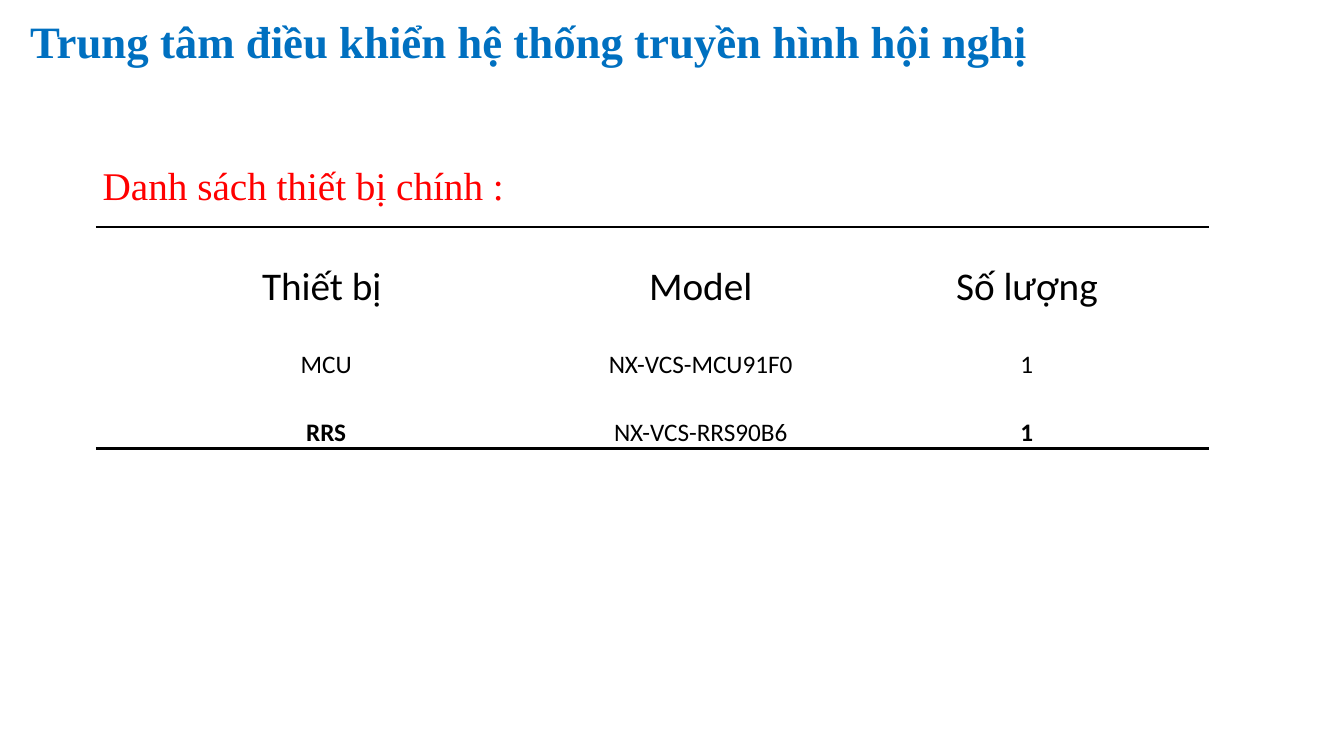
from lxml import etree
from pptx import Presentation
from pptx.dml.color import RGBColor
from pptx.enum.text import MSO_ANCHOR, PP_ALIGN
from pptx.oxml.ns import qn
from pptx.util import Inches, Pt

MIDDLE, TOP, BOTTOM = MSO_ANCHOR.MIDDLE, MSO_ANCHOR.TOP, MSO_ANCHOR.BOTTOM
CENTER = PP_ALIGN.CENTER

TITLE_FORMAT = {"name": "Times New Roman", "size": Pt(32), "bold": True}
CAPTION_FORMAT = {"name": "Times New Roman", "size": Pt(28), "bold": False}
COLUMN_WIDTHS = [4.57, 2.86, 3.61]
ROW_HEIGHTS = [0.84, 0.68, 0.68]
DEVICES = [
    ["Thiết bị ", "Model", "Số lượng"],
    ["MCU", "NX-VCS-MCU91F0", "1"],
    ["RRS", "NX-VCS-RRS90B6", "1"],
]
BOLD_CELLS = {(2, 0), (2, 2)}


def color(value):
    return RGBColor.from_string(value)


def format_font(font, font_format, font_color):
    for name, value in font_format.items():
        setattr(font, name, value)
    font.color.rgb = color(font_color)


def add_text(slide, box, text, font_format, font_color, anchor, line_spacing=1.0):
    shape = slide.shapes.add_textbox(*map(Inches, box))
    frame = shape.text_frame
    frame.word_wrap = True
    frame.vertical_anchor = anchor
    paragraph = frame.paragraphs[0]
    paragraph.text = text
    paragraph.line_spacing = line_spacing
    format_font(paragraph.font, font_format, font_color)


def set_borders(cell, ruled_sides):
    """Draw a 2 pt black rule on the given sides and clear the others."""
    properties = cell._tc.get_or_add_tcPr()
    for position, side in enumerate("LRTB"):
        line = etree.Element(qn(f"a:ln{side}"), w=str(Pt(2)))
        if side in ruled_sides:
            fill = etree.SubElement(line, qn("a:solidFill"))
            etree.SubElement(fill, qn("a:srgbClr"), val="000000")
        else:
            etree.SubElement(line, qn("a:noFill"))
        properties.insert(position, line)


def fill_cell(cell, text, font_format, ruled_sides):
    cell.margin_left = cell.margin_top = cell.margin_right = Inches(0.01)
    cell.margin_bottom = 0
    cell.vertical_anchor = BOTTOM
    cell.fill.solid()
    cell.fill.fore_color.rgb = color("FFFFFF")
    set_borders(cell, ruled_sides)
    paragraph = cell.text_frame.paragraphs[0]
    paragraph.alignment = CENTER
    run = paragraph.add_run()
    run.text = text
    format_font(run.font, font_format, "000000")


def add_device_table(slide, left, top):
    box = (left, top, sum(COLUMN_WIDTHS), sum(ROW_HEIGHTS))
    table = slide.shapes.add_table(
        len(DEVICES), len(COLUMN_WIDTHS), *map(Inches, box)).table
    table.first_row = table.horz_banding = False
    for column, width in zip(table.columns, COLUMN_WIDTHS):
        column.width = Inches(width)
    for row, height in zip(table.rows, ROW_HEIGHTS):
        row.height = Inches(height)

    # Rules only above the header and below the last row
    ruled_sides = {0: "T", len(DEVICES) - 1: "B"}
    for row_index, values in enumerate(DEVICES):
        for column_index, text in enumerate(values):
            font_format = {
                "name": "Calibri",
                "size": Pt(18 if row_index else 28),
                "bold": (row_index, column_index) in BOLD_CELLS,
            }
            fill_cell(table.cell(row_index, column_index), text,
                      font_format, ruled_sides.get(row_index, ""))


def main():
    presentation = Presentation()
    presentation.slide_width = Inches(13.33)
    presentation.slide_height = Inches(7.5)
    slide = presentation.slides.add_slide(presentation.slide_layouts[6])

    # Title
    add_text(slide, (0.2, -0.08, 10.99, 1.04),
             "Trung tâm điều khiển hệ thống truyền hình hội nghị",
             TITLE_FORMAT, "0070C0", MIDDLE, 0.9)
    # Device list
    add_device_table(slide, 0.95, 2.25)
    add_text(slide, (0.92, 1.55, 5.35, 0.57), "Danh sách thiết bị chính :",
             CAPTION_FORMAT, "FF0000", TOP)

    presentation.save("out.pptx")


if __name__ == "__main__":
    main()
